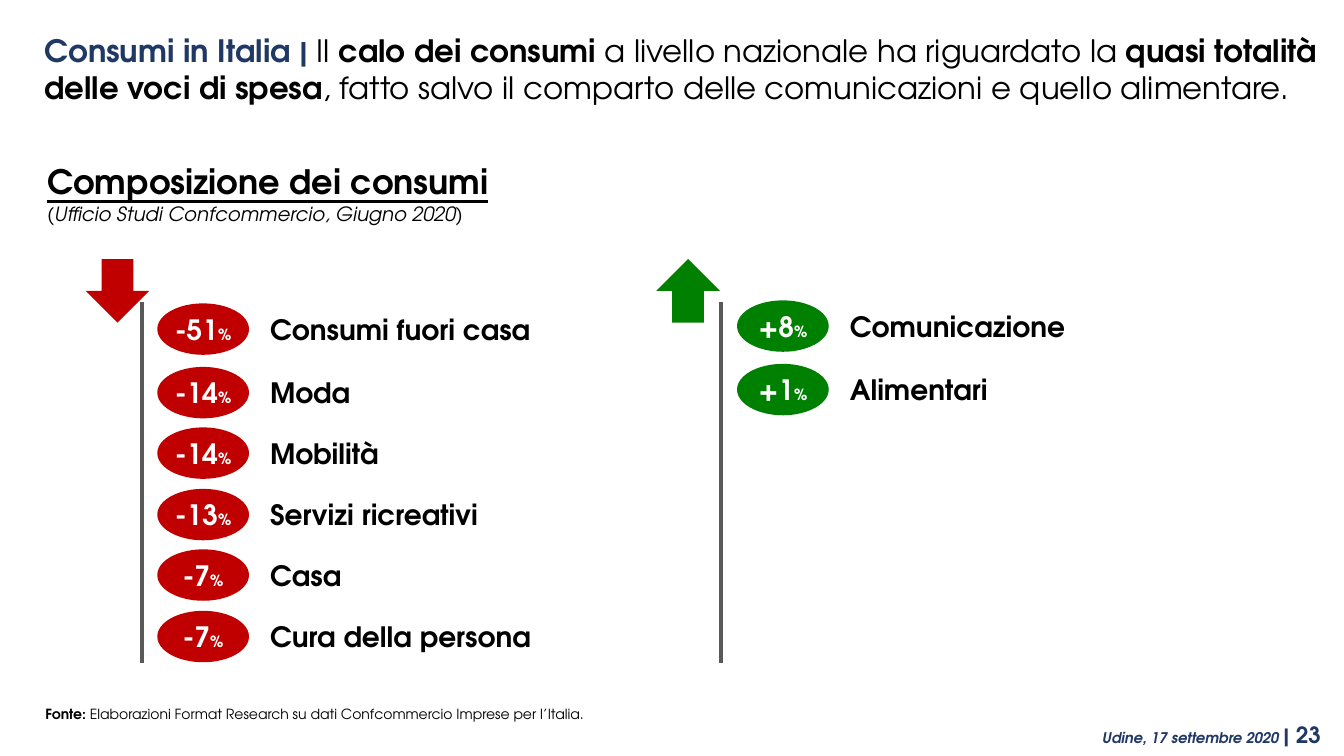
from dataclasses import dataclass

from lxml import etree
from pptx import Presentation
from pptx.dml.color import RGBColor
from pptx.enum.shapes import MSO_CONNECTOR, MSO_SHAPE
from pptx.enum.text import MSO_ANCHOR, MSO_AUTO_SIZE, PP_ALIGN
from pptx.oxml.ns import qn
from pptx.util import Pt

LEFT, CENTER, RIGHT = PP_ALIGN.LEFT, PP_ALIGN.CENTER, PP_ALIGN.RIGHT
TOP, MIDDLE = MSO_ANCHOR.TOP, MSO_ANCHOR.MIDDLE
NO_AUTOFIT = MSO_AUTO_SIZE.NONE
ELLIPSE, UP_ARROW = MSO_SHAPE.OVAL, MSO_SHAPE.UP_ARROW
STRAIGHT = MSO_CONNECTOR.STRAIGHT

EMU_PER_PX = 9144
FONT = "TeX Gyre Adventor"
BLACK, WHITE, NAVY, GRAY = "000000", "FFFFFF", "203864", "595959"
RED, GREEN = "C00000", "008000"

ARROW_TOP, ARROW_SIZE = 257, 63
RULE_TOP, RULE_BOTTOM = 300, 658
BADGE_WIDTH, BADGE_HEIGHT = 91, 51
LABEL_WIDTH, LABEL_HEIGHT = 331, 44
FIRST_GAP, TWO_ROW_GAP = 63, 121


@dataclass(frozen=True)
class Run:
    text: str
    size: float
    color: str = BLACK
    bold: bool = False
    italic: bool = False
    underline: bool = False


@dataclass(frozen=True)
class Item:
    change: str
    label: str


@dataclass(frozen=True)
class Column:
    color: str
    arrow_left: int
    arrow_rotation: int
    rule_x: int
    badge_left: int
    label_left: int
    first_top: int
    items: tuple[Item, ...]


TITLE = [
    Run("Consumi in Italia | ", 22, NAVY, bold=True),
    Run("Il ", 22),
    Run("calo dei consumi ", 22, bold=True),
    Run("a livello nazionale ha riguardato la ", 22),
    Run("quasi totalità delle voci di spesa", 22, bold=True),
    Run(", fatto salvo il comparto delle comunicazioni e quello alimentare.", 22),
]
HEADING = [
    [Run("Composizione dei consumi", 24, bold=True, underline=True)],
    [Run("(Ufficio Studi Confcommercio, Giugno 2020)", 14, italic=True)],
]
SOURCE = [
    Run("Fonte: ", 10, bold=True),
    Run("Elaborazioni Format Research su dati Confcommercio Imprese per l’Italia.", 10),
]
FOOTER = [
    Run("Udine, 17 settembre 2020 ", 10.5, NAVY, bold=True, italic=True),
    Run("| 23", 16, NAVY, bold=True),
]
COLUMNS = [
    Column(RED, 85, 180, 141, 156, 258, 301, (
        Item("-51", "Consumi fuori casa"),
        Item("-14", "Moda"),
        Item("-14", "Mobilità"),
        Item("-13", "Servizi ricreativi"),
        Item("-7", "Casa"),
        Item("-7", "Cura della persona"),
    )),
    Column(GREEN, 651, 0, 715, 731, 833, 298, (
        Item("+8", "Comunicazione"),
        Item("+1", "Alimentari"),
    )),
]


def px(value: int) -> int:
    return value * EMU_PER_PX


def rgb(color: str) -> RGBColor:
    return RGBColor.from_string(color)


def apply(target, values: dict) -> None:
    for name, value in values.items():
        setattr(target, name, value)


def write(frame, lines: list[list[Run]], alignment=LEFT, anchor=TOP,
          margins: tuple[int, int] = (10, 5)) -> None:
    side, edge = map(px, margins)
    apply(frame, {
        "word_wrap": True, "auto_size": NO_AUTOFIT, "vertical_anchor": anchor,
        "margin_left": side, "margin_right": side,
        "margin_top": edge, "margin_bottom": edge,
    })
    for index, runs in enumerate(lines):
        paragraph = frame.add_paragraph() if index else frame.paragraphs[0]
        paragraph.alignment = alignment
        for item in runs:
            run = paragraph.add_run()
            run.text = item.text
            apply(run.font, {
                "name": FONT, "size": Pt(item.size), "bold": item.bold,
                "italic": item.italic, "underline": item.underline,
            })
            run.font.color.rgb = rgb(item.color)


def add_text(slide, left: int, top: int, width: int, height: int,
             lines: list[list[Run]], **layout) -> None:
    box = slide.shapes.add_textbox(*map(px, (left, top, width, height)))
    write(box.text_frame, lines, **layout)


def add_filled(slide, kind, left: int, top: int, width: int, height: int, color: str):
    shape = slide.shapes.add_shape(kind, *map(px, (left, top, width, height)))
    shape.shadow.inherit = False
    shape.fill.solid()
    shape.fill.fore_color.rgb = rgb(color)
    shape.line.fill.background()
    return shape


def add_rule(slide, x: int) -> None:
    rule = slide.shapes.add_connector(
        STRAIGHT, px(x), px(RULE_TOP), px(x), px(RULE_BOTTOM))
    rule.line.color.rgb = rgb(GRAY)
    rule.line.width = Pt(3)
    etree.SubElement(rule._element.spPr, qn("a:effectLst"))


def row_top(column: Column, index: int) -> int:
    if index == 0:
        return column.first_top
    return column.first_top + FIRST_GAP + TWO_ROW_GAP * (index - 1) // 2


def add_column(slide, column: Column) -> None:
    arrow = add_filled(slide, UP_ARROW, column.arrow_left, ARROW_TOP,
                       ARROW_SIZE, ARROW_SIZE, column.color)
    arrow.rotation = column.arrow_rotation
    add_rule(slide, column.rule_x)
    for index, item in enumerate(column.items):
        top = row_top(column, index)
        badge = add_filled(slide, ELLIPSE, column.badge_left, top,
                           BADGE_WIDTH, BADGE_HEIGHT, column.color)
        value = [Run(item.change, 20, WHITE, bold=True), Run("%", 11, WHITE, bold=True)]
        write(badge.text_frame, [value], CENTER, MIDDLE, (0, 0))
        add_text(slide, column.label_left, top + 4, LABEL_WIDTH, LABEL_HEIGHT,
                 [[Run(item.label, 20, bold=True)]])


def main() -> None:
    presentation = Presentation()
    apply(presentation, {"slide_width": px(1333), "slide_height": px(750)})
    slide = presentation.slides.add_slide(presentation.slide_layouts[5])
    title = slide.shapes.title
    apply(title, {"left": px(37), "top": px(27), "width": px(1296), "height": px(82)})
    write(title.text_frame, [TITLE], margins=(7, 4))
    add_text(slide, 37, 155, 607, 74, HEADING)
    for column in COLUMNS:
        add_column(slide, column)
    add_text(slide, 37, 695, 1284, 27, [SOURCE], margins=(8, 5))
    add_text(slide, 627, 711, 693, 37, [FOOTER], alignment=RIGHT)
    presentation.save("out.pptx")


if __name__ == "__main__":
    main()
